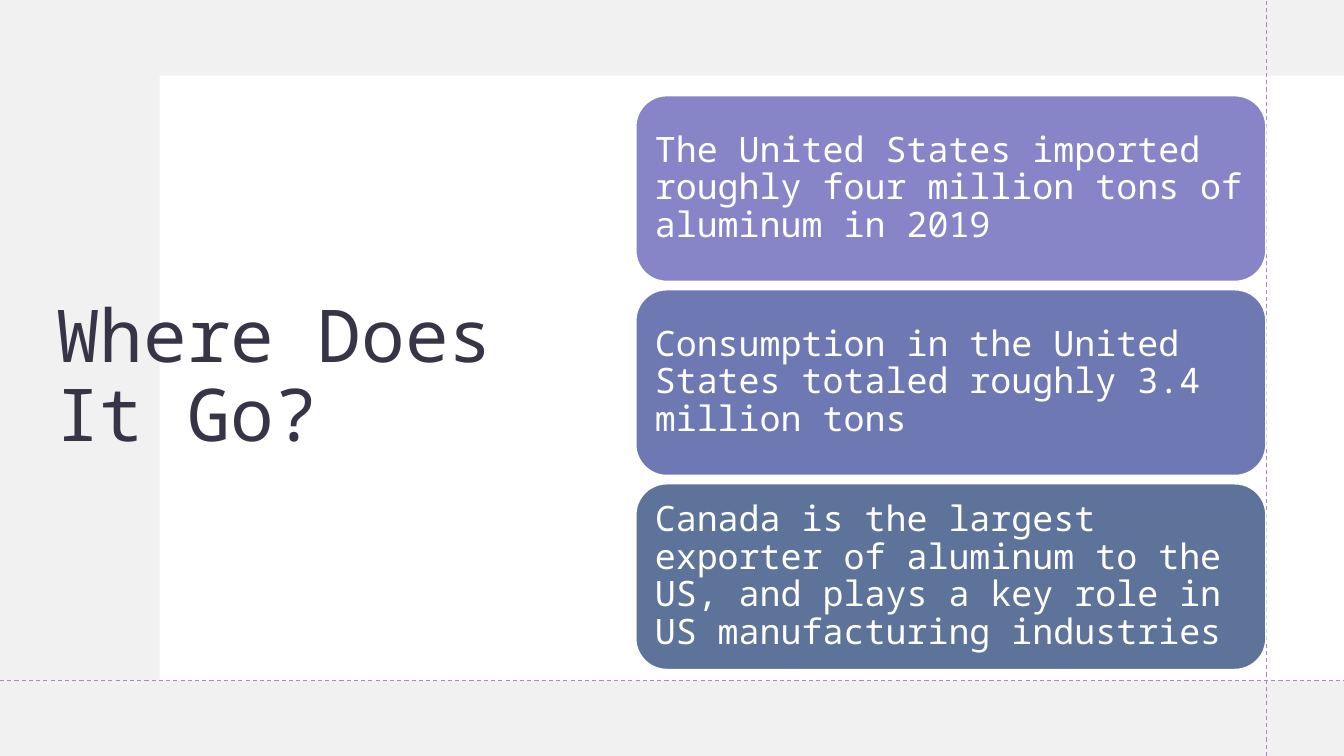
from dataclasses import dataclass

from lxml.etree import SubElement
from pptx import Presentation
from pptx.dml.color import RGBColor
from pptx.enum.dml import MSO_LINE
from pptx.enum.shapes import MSO_CONNECTOR, MSO_SHAPE
from pptx.enum.text import MSO_ANCHOR, PP_ALIGN
from pptx.oxml.ns import qn
from pptx.util import Inches, Pt

COLS, ROWS = 160, 90  # square grid, twelve cells to the inch
FONT = "Noto Sans Mono"
PANEL_LEFT, PANEL_TOP, PANEL_ROWS = 19, 9, 72
CARD_LEFT, CARD_TOP, CARD_COLS, CARD_ROWS = 75.7, 11.4, 75, 22.1
CARD_PITCH = 23.1
GUIDE_COL = 150.8


@dataclass
class Card:
    text: str
    fill: str


CARDS = [
    Card("The United States imported roughly four million tons of aluminum in 2019", "8784C7"),
    Card("Consumption in the United States totaled roughly 3.4 million tons", "6E79B3"),
    Card("Canada is the largest exporter of aluminum to the US, and plays a key role "
         "in US manufacturing industries", "5D739A"),
]


def cells(*counts: float) -> list[int]:
    return [Inches(n / 12) for n in counts]


def rgb(color: str) -> RGBColor:
    return RGBColor.from_string(color)


def add_block(s, kind, box: tuple, fill: str, line: str | None = None, alpha: int = 100):
    sp = s.shapes.add_shape(kind, *cells(*box))
    sp.shadow.inherit = False
    sp.fill.solid()
    sp.fill.fore_color.rgb = rgb(fill)
    if alpha < 100:
        clr = sp.fill._xPr.find(f".//{qn('a:srgbClr')}")
        SubElement(clr, qn("a:alpha"), val=str(alpha * 1000))
    if line:
        sp.line.color.rgb = rgb(line)
        sp.line.width = Pt(1)
    else:
        sp.line.fill.background()
    return sp


def set_text(sp, text: str, *, size: float, color: str, inset: float | None = None) -> None:
    tf = sp.text_frame
    tf.word_wrap = True
    tf.vertical_anchor = MSO_ANCHOR.MIDDLE
    if inset is not None:
        tf.margin_left = tf.margin_right = tf.margin_top = tf.margin_bottom = Inches(inset)
    p = tf.paragraphs[0]
    p.alignment = PP_ALIGN.LEFT
    p.line_spacing = 0.9
    r = p.add_run()
    r.text = text
    r.font.size = Pt(size)
    r.font.name = FONT
    r.font.color.rgb = rgb(color)


def add_guide(s, x1: float, y1: float, x2: float, y2: float) -> None:
    cn = s.shapes.add_connector(MSO_CONNECTOR.STRAIGHT, *cells(x1, y1, x2, y2))
    cn.line.color.rgb = rgb("AD84C6")
    cn.line.width = Pt(0.75)
    cn.line.dash_style = MSO_LINE.DASH
    SubElement(cn._element.spPr, qn("a:effectLst"))


def main() -> None:
    prs = Presentation()
    prs.slide_width, prs.slide_height = cells(COLS, ROWS)
    s = prs.slides.add_slide(prs.slide_layouts[6])

    # Tinted backdrop and white panel
    add_block(s, MSO_SHAPE.RECTANGLE, (0, 0, COLS, ROWS), "DCD8DC", alpha=35)
    add_block(s, MSO_SHAPE.RECTANGLE,
              (PANEL_LEFT, PANEL_TOP, COLS - PANEL_LEFT, PANEL_ROWS), "FFFFFF")

    # Title
    title = s.shapes.add_textbox(*cells(5.5, 12.4, 66.5, 65.3))
    set_text(title, "Where Does It Go?", size=52, color="373545")

    # Dashed guides
    add_guide(s, GUIDE_COL, ROWS, GUIDE_COL, 0)
    add_guide(s, 0, PANEL_TOP + PANEL_ROWS, COLS, PANEL_TOP + PANEL_ROWS)

    # Stacked fact cards
    for i, card in enumerate(CARDS):
        box = (CARD_LEFT, CARD_TOP + i * CARD_PITCH, CARD_COLS, CARD_ROWS)
        sp = add_block(s, MSO_SHAPE.ROUNDED_RECTANGLE, box, card.fill, line="FFFFFF")
        set_text(sp, card.text, size=25, color="FFFFFF", inset=0.1)

    prs.save("out.pptx")


if __name__ == "__main__":
    main()
